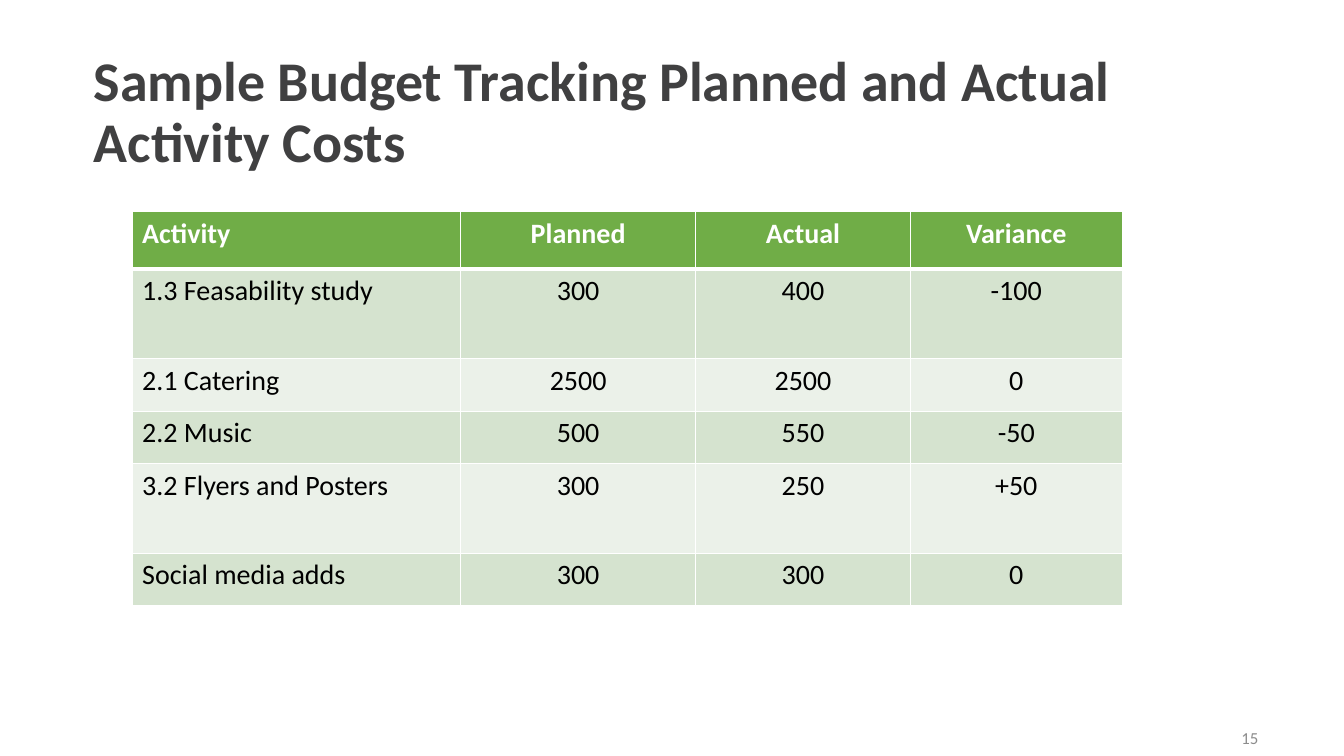
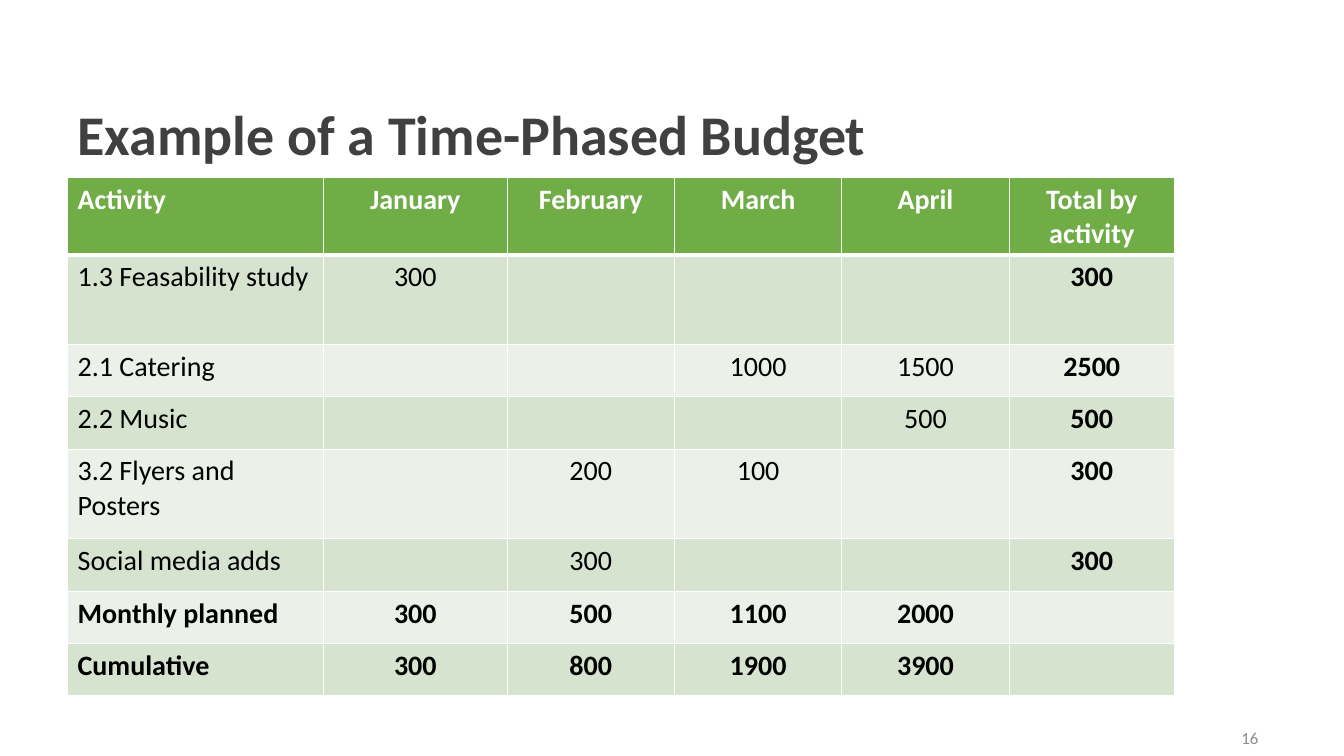
from lxml import etree
from pptx import Presentation
from pptx.dml.color import RGBColor
from pptx.enum import text
from pptx.oxml import ns
from pptx.util import Inches, Pt

FONT = "Calibri"
WHITE = RGBColor(0xFF, 0xFF, 0xFF)
BLACK = RGBColor(0x00, 0x00, 0x00)
TITLE_GREY = RGBColor(0x40, 0x40, 0x41)
NUMBER_GREY = RGBColor(0x8C, 0x8C, 0x8C)
HEADER_GREEN = RGBColor(0x70, 0xAD, 0x47)
BAND_GREENS = [RGBColor(0xEB, 0xF1, 0xE9), RGBColor(0xD5, 0xE3, 0xCF)]

HEADER_HEIGHT, ROW_HEIGHT, TALL_HEIGHT = 0.57, 0.52, 0.89
TALL_ROWS = {"1.3 Feasability study", "3.2 Flyers and Posters"}
TOTAL_LABELS = {"Total by activity", "Monthly planned", "Cumulative"}

PAGES = [
    {
        "number": 15,
        "title": "Sample Budget Tracking Planned and Actual Activity Costs",
        "title_at": (0.83, 0.53, 11.27, 1.65),
        "table_at": (1.31, 2.1),
        "widths": [3.26, 2.33, 2.13, 2.1],
        "rows": [
            ["Activity", "Planned", "Actual", "Variance"],
            ["1.3 Feasability study", "300", "400", "-100"],
            ["2.1 Catering", "2500", "2500", "0"],
            ["2.2 Music", "500", "550", "-50"],
            ["3.2 Flyers and Posters", "300", "250", "+50"],
            ["Social media adds", "300", "300", "0"],
        ],
    },
    {
        "number": 16,
        "title": "Example of a Time-Phased Budget",
        "title_at": (0.67, 1.06, 12.11, 1.04),
        "table_at": (0.67, 1.76),
        "widths": [2.54, 1.82, 1.66, 1.66, 1.66, 1.64],
        "rows": [
            ["Activity", "January", "February", "March", "April", "Total by activity"],
            ["1.3 Feasability study", "300", "", "", "", "300"],
            ["2.1 Catering", "", "", "1000", "1500", "2500"],
            ["2.2 Music", "", "", "", "500", "500"],
            ["3.2 Flyers and Posters", "", "200", "100", "", "300"],
            ["Social media adds", "", "300", "", "", "300"],
            ["Monthly planned", "300", "500", "1100", "2000", ""],
            ["Cumulative", "300", "800", "1900", "3900", ""],
        ],
    },
]


def style(para, size, color, bold=False, align=text.PP_ALIGN.LEFT):
    para.alignment = align
    para.font.name = FONT
    para.font.size = Pt(size)
    para.font.bold = bold
    para.font.color.rgb = color


def add_borders(cell, bottom_width, top_width):
    """Draw white cell borders, which must precede the fill in the XML."""
    properties = cell._tc.get_or_add_tcPr()
    widths = {"a:lnL": 1, "a:lnR": 1, "a:lnT": top_width, "a:lnB": bottom_width}
    for index, (tag, width) in enumerate(widths.items()):
        line = etree.Element(ns.qn(tag), w=str(Pt(width)))
        fill = etree.SubElement(line, ns.qn("a:solidFill"))
        etree.SubElement(fill, ns.qn("a:srgbClr"), val=str(WHITE))
        properties.insert(index, line)


deck = Presentation()
deck.slide_width = Inches(13.33)
deck.slide_height = Inches(7.5)
title_only = deck.slide_layouts[5]

for page in PAGES:
    slide = deck.slides.add_slide(title_only)

    title = slide.shapes.title
    title.left, title.top, title.width, title.height = map(Inches, page["title_at"])
    frame = title.text_frame
    frame.text = page["title"]
    frame.word_wrap = True
    frame.auto_size = text.MSO_AUTO_SIZE.NONE
    frame.vertical_anchor = text.MSO_ANCHOR.TOP
    frame.margin_top = 0
    para = frame.paragraphs[0]
    para.line_spacing = 0.9
    style(para, 40, TITLE_GREY, bold=True)

    number_box = slide.shapes.add_textbox(Inches(9.58), Inches(7.12), Inches(3), Inches(0.4))
    frame = number_box.text_frame
    frame.text = str(page["number"])
    frame.word_wrap = True
    frame.vertical_anchor = text.MSO_ANCHOR.MIDDLE
    style(frame.paragraphs[0], 12, NUMBER_GREY, align=text.PP_ALIGN.RIGHT)

    rows, widths = page["rows"], page["widths"]
    heights = [HEADER_HEIGHT] + [
        TALL_HEIGHT if row[0] in TALL_ROWS else ROW_HEIGHT for row in rows[1:]
    ]
    left, top = page["table_at"]
    table = slide.shapes.add_table(
        len(rows), len(widths),
        Inches(left), Inches(top), Inches(sum(widths)), Inches(sum(heights)),
    ).table
    for column, width in zip(table.columns, widths):
        column.width = Inches(width)
    for row, height in zip(table.rows, heights):
        row.height = Inches(height)

    for r, row in enumerate(rows):
        is_header = r == 0
        for c, value in enumerate(row):
            cell = table.cell(r, c)
            cell.text = value
            cell.fill.solid()
            cell.fill.fore_color.rgb = HEADER_GREEN if is_header else BAND_GREENS[r % 2]
            add_borders(cell, 3 if is_header else 1, 3 if r == 1 else 1)
            style(
                cell.text_frame.paragraphs[0],
                20,
                WHITE if is_header else BLACK,
                bold=is_header or row[0] in TOTAL_LABELS or rows[0][c] in TOTAL_LABELS,
                align=text.PP_ALIGN.CENTER if c else text.PP_ALIGN.LEFT,
            )

deck.save("out.pptx")
